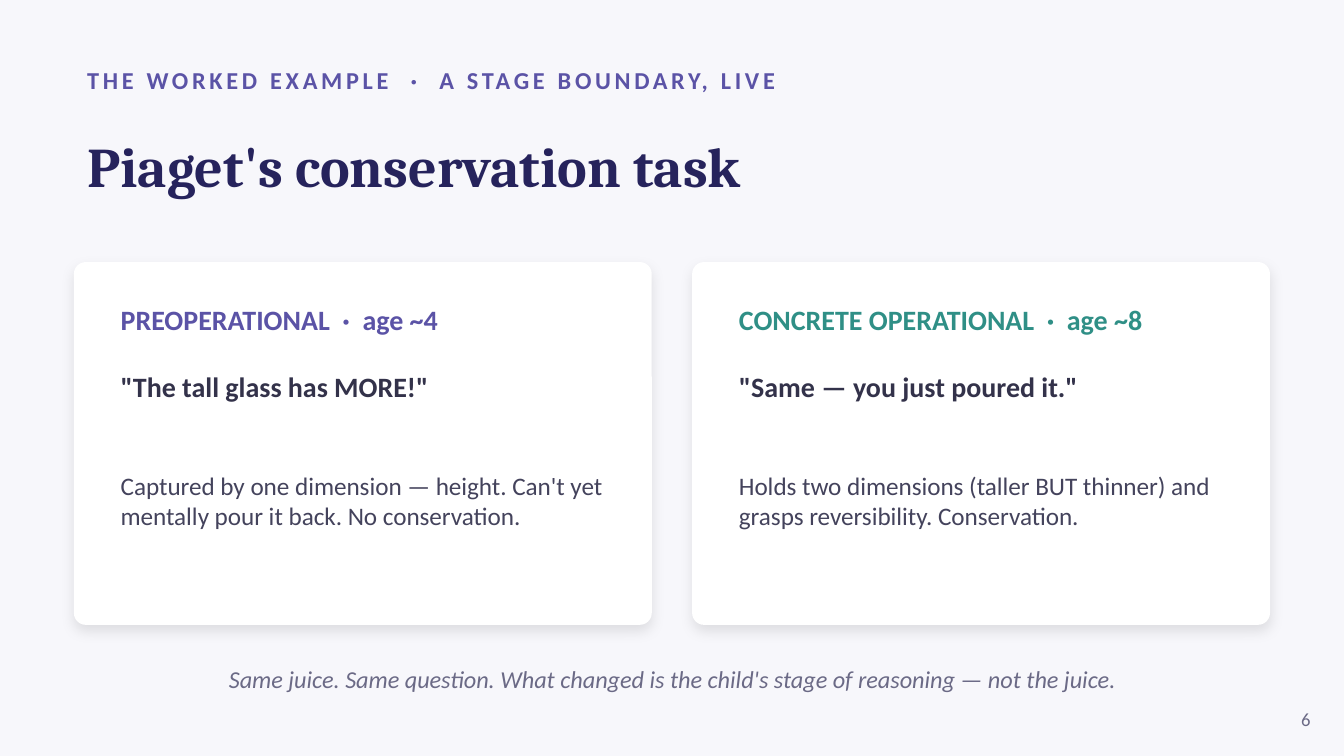
"""Build the slide on Piaget's conservation task."""
from dataclasses import dataclass
from typing import Optional

from lxml.etree import SubElement
from pptx import Presentation
from pptx.dml.color import RGBColor
from pptx.enum.shapes import MSO_SHAPE as Preset
from pptx.enum.text import MSO_ANCHOR as Anchor, MSO_AUTO_SIZE as AutoSize, PP_ALIGN as Align
from pptx.oxml.ns import qn
from pptx.util import Emu, Pt

PX = 4572
SLIDE_WIDTH, SLIDE_HEIGHT = 2000, 1125
PAPER = RGBColor(0xF7, 0xF7, 0xFB)
WHITE = RGBColor(0xFF, 0xFF, 0xFF)
VIOLET = RGBColor(0x5B, 0x53, 0xA6)
TEAL = RGBColor(0x2F, 0x8F, 0x86)
NAVY = RGBColor(0x26, 0x23, 0x5C)
INK = RGBColor(0x33, 0x32, 0x4A)
SLATE = RGBColor(0x44, 0x43, 0x5C)
MUTED = RGBColor(0x6B, 0x6A, 0x86)

MARGIN = 110
CONTENT_WIDTH = SLIDE_WIDTH - 2 * MARGIN
CARD_TOP, CARD_HEIGHT, CARD_GAP = 390, 540, 60
CARD_WIDTH = (CONTENT_WIDTH - CARD_GAP) // 2
CARD_PADDING = 50


@dataclass(frozen=True)
class Box:
    """A rectangle in px."""
    left: int
    top: int
    width: int
    height: int

    def emu(self) -> tuple[Emu, ...]:
        """Return the rectangle in EMU."""
        return tuple(Emu(n * PX) for n in (self.left, self.top, self.width, self.height))


@dataclass(frozen=True)
class Stage:
    """A developmental stage and the child's answer."""
    heading: str
    accent: RGBColor
    answer: str
    reasoning: str


STAGES = (
    Stage("PREOPERATIONAL  ·  age ~4", VIOLET, '"The tall glass has MORE!"',
          "Captured by one dimension — height. Can't yet mentally pour it back. No conservation."),
    Stage("CONCRETE OPERATIONAL  ·  age ~8", TEAL, '"Same — you just poured it."',
          "Holds two dimensions (taller BUT thinner) and grasps reversibility. Conservation."),
)


def write(paragraph, text: str, *, size: float, color: RGBColor, font: str = "Calibri",
          bold: bool = False, italic: bool = False, align: Align = Align.LEFT,
          before: float = 0, spacing: Optional[int] = None) -> None:
    """Write one formatted run into a paragraph."""
    paragraph.alignment = align
    paragraph.space_before = Pt(before)
    run = paragraph.add_run()
    run.text = text
    run.font.name = font
    run.font.size = Pt(size)
    run.font.bold = bold
    run.font.italic = italic
    run.font.color.rgb = color
    if spacing is not None:
        run._r.get_or_add_rPr().set("spc", str(spacing * 100))


def add_text_frame(slide, box: Box, anchor: Anchor = Anchor.MIDDLE):
    """Add a wrapping text box and return its frame."""
    frame = slide.shapes.add_textbox(*box.emu()).text_frame
    frame.word_wrap = True
    frame.vertical_anchor = anchor
    return frame


def add_title(slide, box: Box, text: str) -> None:
    """Place and format the title placeholder."""
    title = slide.shapes.title
    title.left, title.top, title.width, title.height = box.emu()
    title.text_frame.word_wrap = True
    title.text_frame.auto_size = AutoSize.NONE
    title.text_frame.vertical_anchor = Anchor.MIDDLE
    write(title.text_frame.paragraphs[0], text, size=30, color=NAVY, font="Cambria", bold=True)


def add_soft_shadow(shape) -> None:
    """Give a shape a faint shadow that falls straight down."""
    shape.shadow.inherit = False
    effects = shape._element.spPr.find(qn("a:effectLst"))
    shadow = SubElement(effects, qn("a:outerShdw"), blurRad=str(Pt(7)), dist=str(Pt(3)),
                        dir=str(90 * 60000), algn="bl", rotWithShape="0")
    black = SubElement(shadow, qn("a:srgbClr"), val="000000")
    SubElement(black, qn("a:alpha"), val="10000")


def add_stage_card(slide, left: int, stage: Stage) -> None:
    """Draw a stage card with its heading, answer and reasoning."""
    card = slide.shapes.add_shape(
        Preset.ROUNDED_RECTANGLE, *Box(left, CARD_TOP, CARD_WIDTH, CARD_HEIGHT).emu())
    card.adjustments[0] = 0.033
    card.fill.solid()
    card.fill.fore_color.rgb = WHITE
    card.line.fill.background()
    add_soft_shadow(card)

    body = add_text_frame(slide, Box(left + CARD_PADDING, CARD_TOP + CARD_PADDING,
                                     CARD_WIDTH - 2 * CARD_PADDING, 480), Anchor.TOP)
    write(body.paragraphs[0], stage.heading, size=15, color=stage.accent, bold=True)
    write(body.add_paragraph(), stage.answer, size=15, color=INK, bold=True, before=18)
    write(body.add_paragraph(), stage.reasoning, size=13.5, color=SLATE, before=36)


def main() -> None:
    """Build and save the slide."""
    deck = Presentation()
    deck.slide_width, deck.slide_height = Emu(SLIDE_WIDTH * PX), Emu(SLIDE_HEIGHT * PX)
    slide = deck.slides.add_slide(deck.slide_layouts.get_by_name("Title Only"))
    slide.background.fill.solid()
    slide.background.fill.fore_color.rgb = PAPER

    kicker = add_text_frame(slide, Box(MARGIN, 84, 1800, 70))
    write(kicker.paragraphs[0], "THE WORKED EXAMPLE  ·  A STAGE BOUNDARY, LIVE",
          size=13, color=VIOLET, bold=True, spacing=2)
    add_title(slide, Box(MARGIN, 156, CONTENT_WIDTH, 180), "Piaget's conservation task")

    for index, stage in enumerate(STAGES):
        add_stage_card(slide, MARGIN + index * (CARD_WIDTH + CARD_GAP), stage)

    takeaway = add_text_frame(slide, Box(MARGIN, 970, CONTENT_WIDTH, 80))
    write(takeaway.paragraphs[0],
          "Same juice. Same question. What changed is the child's stage of reasoning — not the juice.",
          size=13, color=MUTED, italic=True, align=Align.CENTER)
    page_number = add_text_frame(slide, Box(1870, 1040, 100, 60))
    write(page_number.paragraphs[0], "6", size=10, color=MUTED, align=Align.RIGHT)

    deck.save("out.pptx")


if __name__ == "__main__":
    main()
